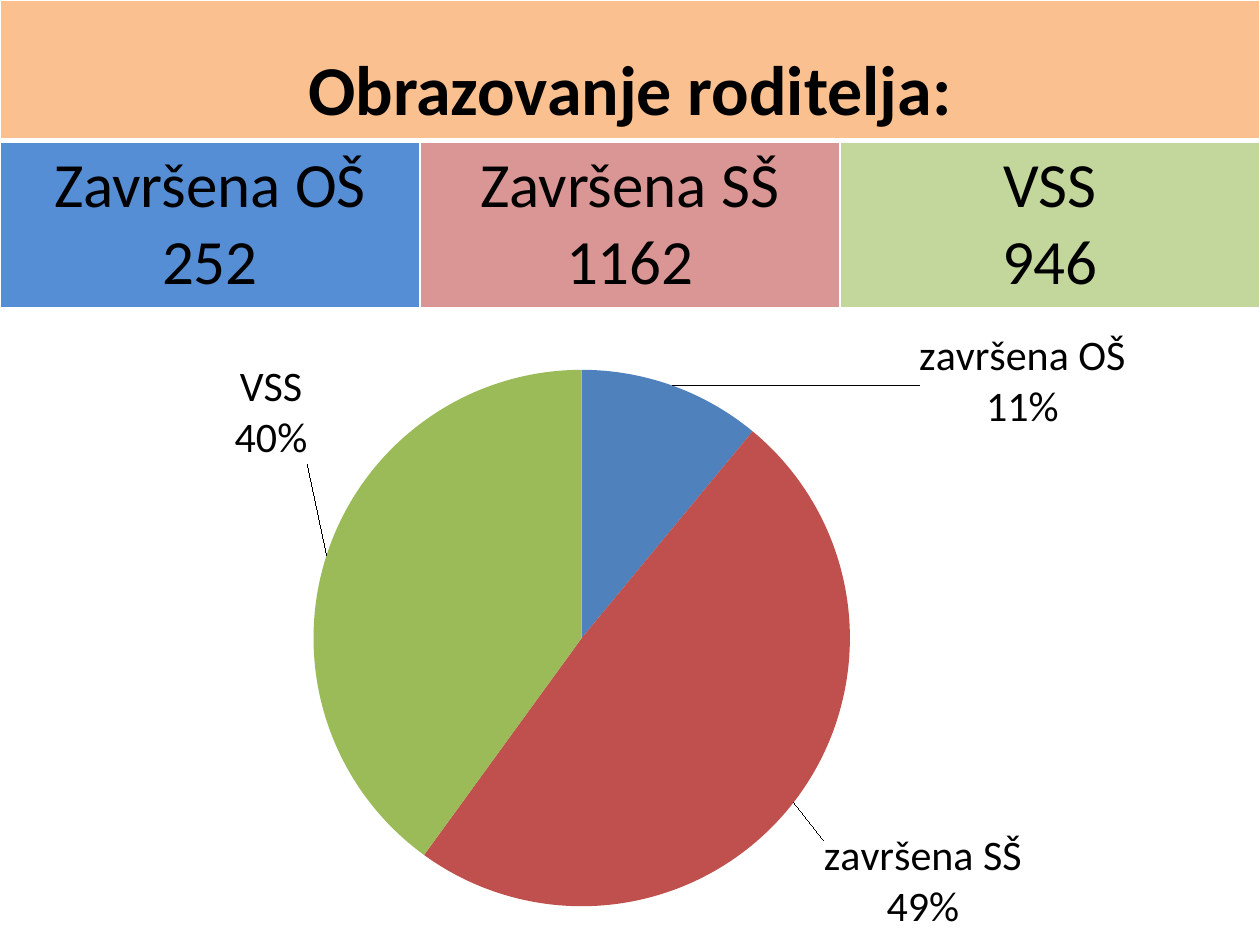
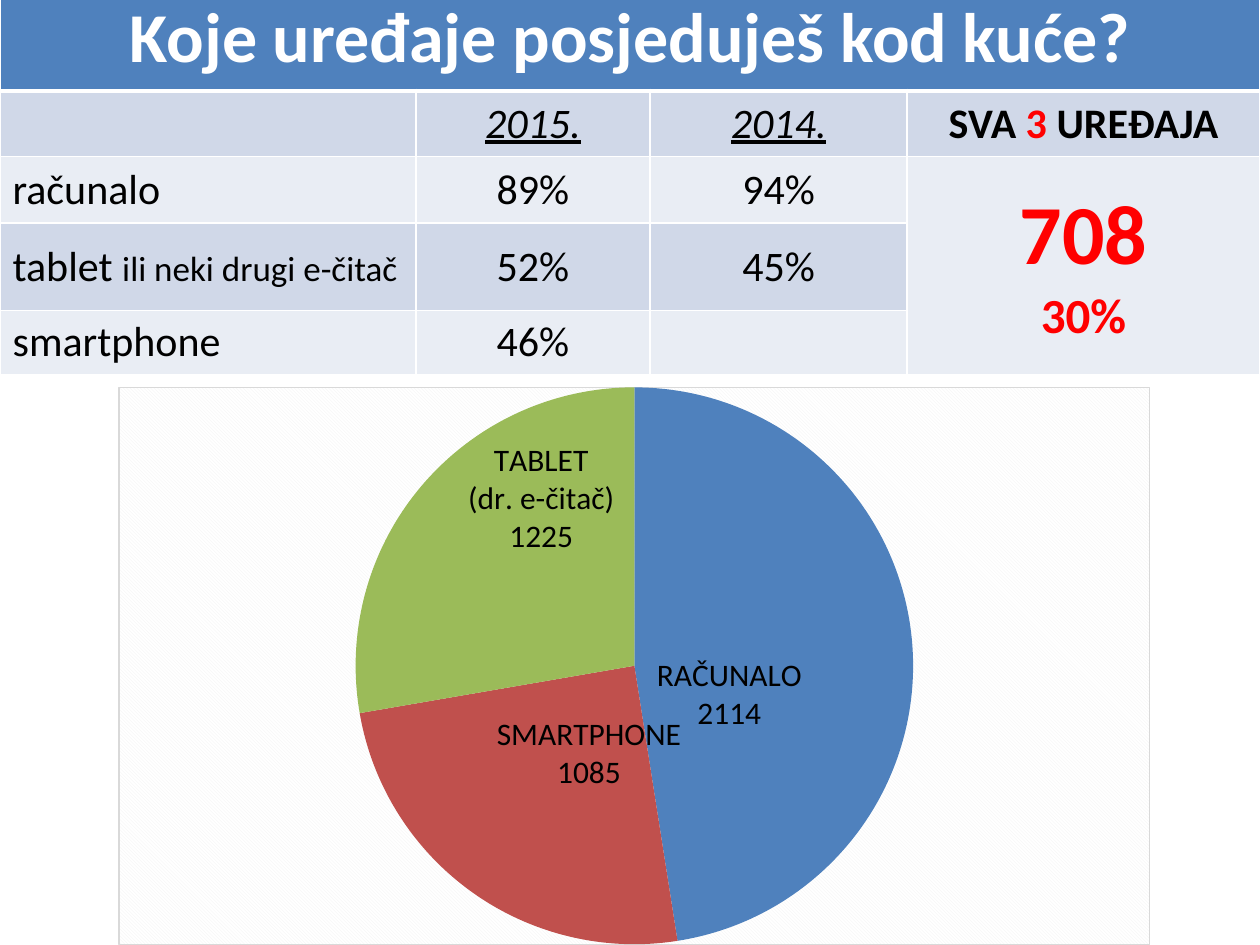
from dataclasses import dataclass

from lxml import etree
from pptx import Presentation
from pptx import util as u
from pptx.chart import data as chart_data
from pptx.dml import color as dml
from pptx.enum import chart as ch, text
from pptx.oxml import parse_xml, ns

Pt = u.Pt
FONT = "Calibri"
BLACK, WHITE, RED = "000000", "FFFFFF", "FF0000"
BLUE, BRICK, GREEN = "4F81BD", "C0504D", "9BBB59"
BAND_DARK, BAND_LIGHT = "D0D8E8", "E9EDF4"
CENTER, LEFT = text.PP_ALIGN.CENTER, text.PP_ALIGN.LEFT
A_NS = ns.nsdecls("a")
CA_NS = ns.nsdecls("c", "a")


def rgb(hex_color):
    return dml.RGBColor.from_string(hex_color)


@dataclass
class Run:
    text: str
    size: float = 24
    color: str = BLACK
    bold: bool = False
    italic: bool = False
    underline: bool = False


@dataclass
class Slice:
    value: float
    label: str
    shift: tuple

    @property
    def category(self):
        return self.label.split("\n")[0]


def manual_layout(x, y, size=None):
    inner = '<c:layoutTarget val="inner"/>' if size else ""
    modes = '<c:xMode val="edge"/><c:yMode val="edge"/>' if size else ""
    extent = f'<c:w val="{size[0]}"/><c:h val="{size[1]}"/>' if size else ""
    return parse_xml(
        f'<c:layout {CA_NS}><c:manualLayout>{inner}{modes}'
        f'<c:x val="{x}"/><c:y val="{y}"/>{extent}</c:manualLayout></c:layout>'
    )


class SurveyDeck:
    def __init__(self):
        self.prs = Presentation()
        self.prs.slide_width, self.prs.slide_height = Pt(720), Pt(540)
        self.slide = None

    def new_slide(self):
        self.slide = self.prs.slides.add_slide(self.prs.slide_layouts[6])

    def table(self, top, widths, heights):
        frame = self.slide.shapes.add_table(
            len(heights), len(widths), 0, Pt(top), Pt(sum(widths)), Pt(sum(heights))
        )
        table = frame.table
        table.first_row = table.horz_banding = False
        for column, width in zip(table.columns, widths):
            column.width = Pt(width)
        for row, height in zip(table.rows, heights):
            row.height = Pt(height)
        for r in range(len(heights)):
            for c in range(len(widths)):
                self.borders(table.cell(r, c), r)
        table.cell(0, 0).merge(table.cell(0, len(widths) - 1))
        return table

    def borders(self, cell, row):
        widths = {"L": 1, "R": 1, "T": 3 if row == 1 else 1, "B": 3 if row == 0 else 1}
        properties = cell._tc.get_or_add_tcPr()
        for index, (side, width) in enumerate(widths.items()):
            properties.insert(index, parse_xml(
                f'<a:ln{side} {A_NS} w="{Pt(width)}"><a:solidFill>'
                f'<a:srgbClr val="{WHITE}"/></a:solidFill></a:ln{side}>'
            ))

    def cell(self, cell, fill, *lines, align=CENTER, spacing=None):
        cell.fill.solid()
        cell.fill.fore_color.rgb = rgb(fill)
        cell.vertical_anchor = text.MSO_ANCHOR.MIDDLE
        frame = cell.text_frame
        for index, line in enumerate(lines):
            paragraph = frame.add_paragraph() if index else frame.paragraphs[0]
            paragraph.alignment = align
            paragraph.line_spacing = spacing
            for part in line:
                run = paragraph.add_run()
                run.text = part.text
                font = run.font
                font.name, font.size = FONT, Pt(part.size)
                font.bold, font.italic = part.bold, part.italic
                font.underline = part.underline
                font.color.rgb = rgb(part.color)

    def pie(self, question, box, slices, plot, position, label_size, leaders, frame_style):
        values = chart_data.CategoryChartData()
        values.categories = [s.category for s in slices]
        values.add_series(question, [s.value for s in slices])
        chart = self.slide.shapes.add_chart(
            ch.XL_CHART_TYPE.PIE, *(Pt(n) for n in box), values
        ).chart
        chart.has_legend = chart.has_title = False
        chart.font.name, chart.font.size = FONT, Pt(10)
        chart.font.color.rgb = rgb(BLACK)
        chart.plots[0].vary_by_categories = True
        series = chart.plots[0].series[0]
        labels = series.data_labels
        labels.show_percentage, labels.show_value = True, False
        labels.show_category_name = leaders
        labels.position = position
        labels.font.name, labels.font.size = FONT, Pt(label_size)
        labels.font.color.rgb = rgb(BLACK)
        for index, (part, color) in enumerate(zip(slices, (BLUE, BRICK, GREEN))):
            point = series.points[index]
            point.format.fill.solid()
            point.format.fill.fore_color.rgb = rgb(color)
            self.slice_label(point.data_label, part.label, position, label_size)
        root = chart.element
        for label, part in zip(root.xpath("//c:ser//c:dLbl"), slices):
            label.insert(1, manual_layout(*part.shift))
        series_labels = root.xpath("//c:ser/c:dLbls")[0]
        for old in series_labels.xpath("c:showLeaderLines"):
            series_labels.remove(old)
        flag = etree.SubElement(series_labels, ns.qn("c:showLeaderLines"))
        flag.set("val", str(int(leaders)))
        area = root.xpath("//c:plotArea")[0]
        for old in area.xpath("c:layout"):
            area.remove(old)
        area.insert(0, manual_layout(plot[0], plot[1], plot[2:]))
        root.xpath("c:chart")[0].addnext(
            parse_xml(f"<c:spPr {CA_NS}>{frame_style}</c:spPr>")
        )

    def slice_label(self, label, wording, position, size):
        frame = label.text_frame
        frame.text = wording
        label.position = position
        for paragraph in frame.paragraphs:
            for run in paragraph.runs:
                run.font.name, run.font.size = FONT, Pt(size)
                run.font.bold = False
                run.font.color.rgb = rgb(BLACK)


def education_slide(deck):
    question = "Obrazovanje roditelja:"
    deck.new_slide()
    table = deck.table(0, [240] * 3, [80, 95.4])
    deck.cell(table.cell(0, 0), "FAC090", [Run(question, 40, bold=True)], spacing=1.5)
    levels = [("Završena OŠ", "252", "558ED5"),
              ("Završena SŠ", "1162", "D99694"),
              ("VSS", "946", "C3D69B")]
    for column, (level, count, fill) in enumerate(levels):
        deck.cell(table.cell(1, column), fill, [Run(level, 36)], [Run(count, 36)])
    deck.pie(
        question, (11.5, 145.4, 697.7, 388.1),
        [Slice(11, "završena OŠ\n11%", (0.2, 0.08)),
         Slice(49, "završena SŠ\n49%", (0.02, 0.05)),
         Slice(40, "VSS\n40%", (-0.01, -0.13))],
        (0.02, 0.17, 0.88, 0.79), ch.XL_LABEL_POSITION.OUTSIDE_END, 24, True,
        "<a:noFill/><a:ln><a:noFill/></a:ln>",
    )


def devices_slide(deck):
    question = "Koje uređaje posjeduješ kod kuće?"
    deck.new_slide()
    deck.pie(
        question, (67.7, 221, 589.7, 319),
        [Slice(48, "RAČUNALO\n2114", (-0.1, 0.09)),
         Slice(25, "SMARTPHONE\n1085", (0.02, -0.17)),
         Slice(28, "TABLET\n(dr. e-čitač)\n1225", (0.04, -0.09))],
        (0, 0, 1, 1), ch.XL_LABEL_POSITION.INSIDE_END, 18, False,
        '<a:pattFill prst="dkDnDiag"><a:fgClr><a:srgbClr val="F2F2F2"/></a:fgClr>'
        '<a:bgClr><a:srgbClr val="FFFFFF"/></a:bgClr></a:pattFill>'
        f'<a:ln w="{Pt(0.75)}"><a:solidFill><a:srgbClr val="D9D9D9"/></a:solidFill></a:ln>',
    )
    table = deck.table(-8, [237.6, 133.9, 146.9, 201.6], [60, 37.5, 38, 50, 36.5])
    deck.cell(table.cell(0, 0), BLUE, [Run(question, 40, WHITE, True)])
    deck.cell(table.cell(1, 0), BAND_DARK)
    for column, year in enumerate(("2015.", "2014."), 1):
        deck.cell(table.cell(1, column), BAND_DARK,
                  [Run(year, italic=True, underline=True)])
    deck.cell(table.cell(1, 3), BAND_DARK,
              [Run("SVA ", bold=True), Run("3 ", color=RED, bold=True),
               Run("UREĐAJA", bold=True)])
    devices = [([Run("računalo")], "89%", "94%"),
               ([Run("tablet "), Run("ili neki drugi e-čitač", 20)], "52%", "45%"),
               ([Run("smartphone")], "46%", None)]
    for row, (device, *shares) in enumerate(devices, 2):
        fill = BAND_DARK if row % 2 else BAND_LIGHT
        deck.cell(table.cell(row, 0), fill, device, align=LEFT)
        for column, share in enumerate(shares, 1):
            deck.cell(table.cell(row, column), fill, *([[Run(share)]] if share else []))
    all_three = table.cell(2, 3)
    all_three.merge(table.cell(4, 3))
    deck.cell(all_three, BAND_LIGHT,
              [Run("708", 48, RED, True)], [Run("30%", 28, RED, True)])


def main():
    deck = SurveyDeck()
    education_slide(deck)
    devices_slide(deck)
    deck.prs.save("out.pptx")


if __name__ == "__main__":
    main()
